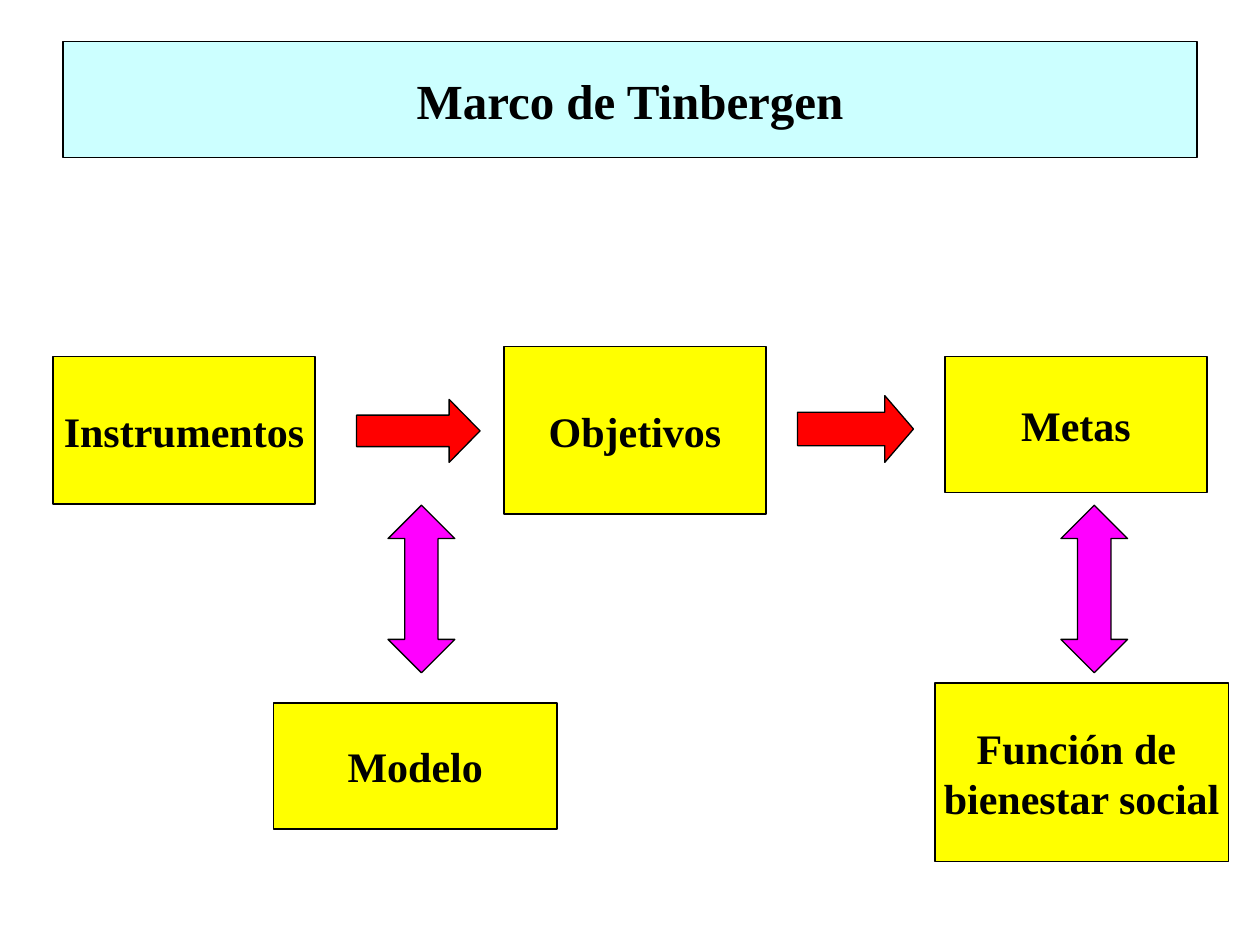
from pptx import Presentation
from pptx.dml.color import RGBColor
from pptx.enum.shapes import MSO_SHAPE
from pptx.enum.text import MSO_ANCHOR, PP_ALIGN
from pptx.util import Inches, Pt

RECT = MSO_SHAPE.RECTANGLE
PROCESS = MSO_SHAPE.FLOWCHART_PROCESS
RIGHT = MSO_SHAPE.RIGHT_ARROW
UPDOWN = MSO_SHAPE.UP_DOWN_ARROW
MIDDLE = MSO_ANCHOR.MIDDLE
CENTER = PP_ALIGN.CENTER

BLACK = RGBColor(0x00, 0x00, 0x00)
YELLOW = RGBColor(0xFF, 0xFF, 0x00)
RED = RGBColor(0xFF, 0x00, 0x00)
PINK = RGBColor(0xFF, 0x00, 0xFF)
CYAN = RGBColor(0xCC, 0xFF, 0xFF)
FONT = "Times New Roman"

TITLE = ("Marco de Tinbergen", (0.5, 0.33, 9, 0.92))
BOXES = [
    (["Instrumentos"], RECT, (0.42, 2.83, 2.08, 1.17)),
    (["Objetivos"], RECT, (4, 2.75, 2.08, 1.33)),
    (["Metas"], PROCESS, (7.5, 2.83, 2.08, 1.08)),
    (["Modelo"], RECT, (2.17, 5.58, 2.25, 1)),
    (["Función de ", "bienestar social"], RECT, (7.42, 5.42, 2.33, 1.42)),
]
ARROWS = [
    (RIGHT, RED, (2.83, 3.17, 0.98, 0.5), 0.49),
    (RIGHT, RED, (6.33, 3.14, 0.92, 0.53), 0.43),
    (UPDOWN, PINK, (3.08, 4.01, 0.53, 1.33), 0.5),
    (UPDOWN, PINK, (8.42, 4.01, 0.53, 1.33), 0.5),
]


def add_form(slide, kind, place, fill):
    form = slide.shapes.add_shape(kind, *map(Inches, place))
    form.shadow.inherit = False
    form.fill.solid()
    form.fill.fore_color.rgb = fill
    form.line.color.rgb = BLACK
    form.line.width = Pt(0.75)
    return form


def add_text(form, lines, size=24, bold=True, color=BLACK):
    frame = form.text_frame
    frame.word_wrap = False
    frame.vertical_anchor = MIDDLE
    for i, line in enumerate(lines):
        para = frame.add_paragraph() if i else frame.paragraphs[0]
        para.alignment = CENTER
        run = para.add_run()
        run.text = line
        run.font.name = FONT
        run.font.size = Pt(size)
        run.font.bold = bold
        run.font.color.rgb = color


def main():
    deck = Presentation()
    deck.slide_width = Inches(10)
    deck.slide_height = Inches(7.5)
    slide = deck.slides.add_slide(deck.slide_layouts[6])

    title, place = TITLE
    add_text(add_form(slide, RECT, place, CYAN), [title], size=28)
    for lines, kind, place in BOXES:
        add_text(add_form(slide, kind, place, YELLOW), lines)
    for kind, fill, place, head in ARROWS:
        arrow = add_form(slide, kind, place, fill)
        arrow.adjustments[0] = 0.5
        arrow.adjustments[1] = head

    deck.save("out.pptx")


if __name__ == "__main__":
    main()
